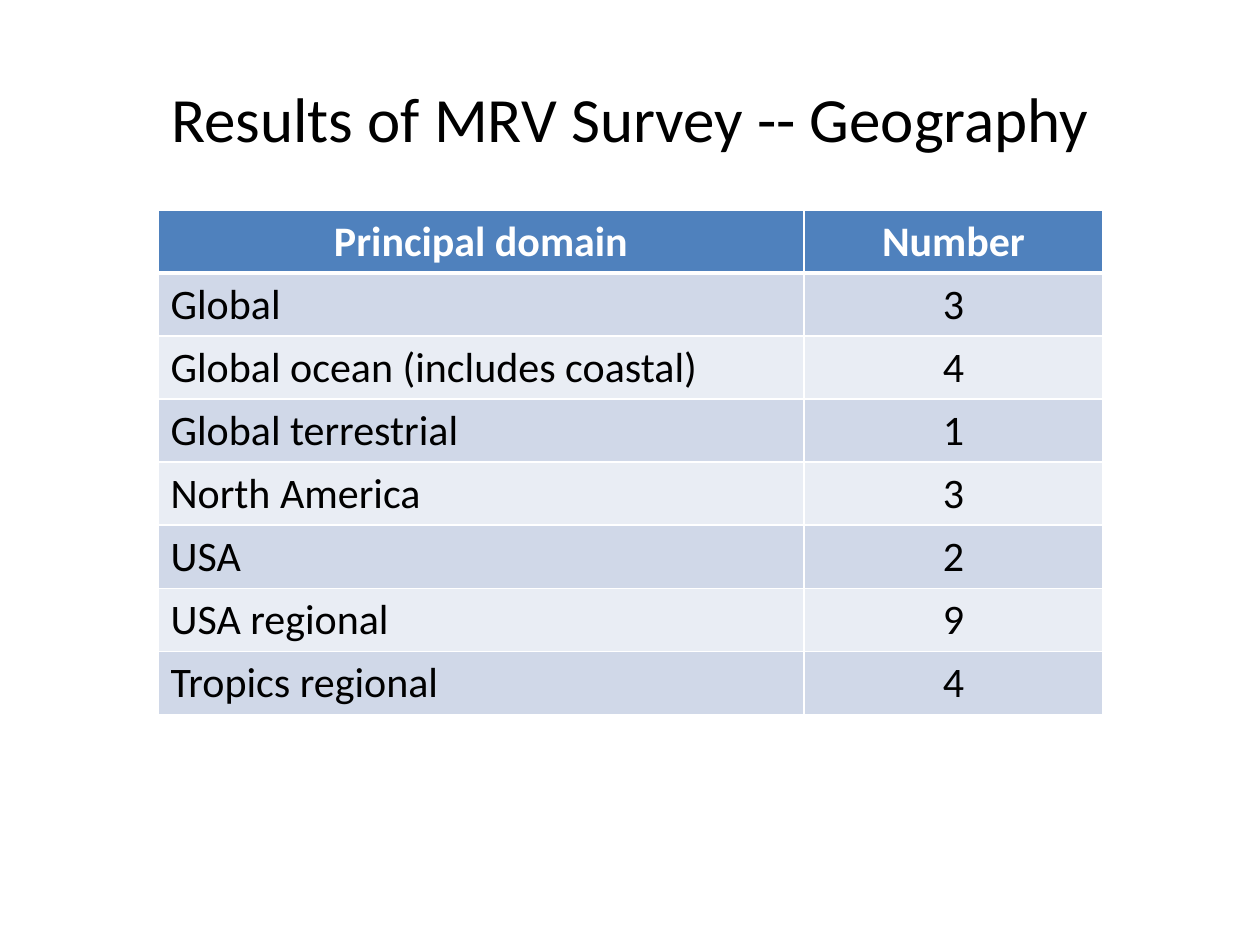
from lxml.etree import SubElement
from pptx import Presentation
from pptx.dml.color import RGBColor
from pptx.enum.text import MSO_ANCHOR, PP_ALIGN
from pptx.oxml.ns import qn
from pptx.util import Emu, Pt

SCALE = 914400 / 126
FONT = "Calibri"
BLACK = RGBColor(0, 0, 0)
WHITE = RGBColor(255, 255, 255)
BLUE = RGBColor(0x4F, 0x81, 0xBD)
BANDS = RGBColor(0xD0, 0xD8, 0xE8), RGBColor(0xE9, 0xED, 0xF4)
TITLE = "Results of MRV Survey -- Geography"
HEAD = "Principal domain", "Number"
DATA = [
    ("Global", 3),
    ("Global ocean (includes coastal)", 4),
    ("Global terrestrial", 1),
    ("North America", 3),
    ("USA", 2),
    ("USA regional", 9),
    ("Tropics regional", 4),
]


def px(*sizes):
    """Turn px lengths into a list of EMU lengths."""
    return [Emu(round(size * SCALE)) for size in sizes]


def write(frame, text, size=24, color=BLACK, bold=False, align=PP_ALIGN.LEFT):
    """Put one formatted paragraph into a text frame."""
    para = frame.paragraphs[0]
    para.alignment = align
    run = para.add_run()
    run.text = text
    font = run.font
    font.name, font.size, font.bold = FONT, Pt(size), bold
    font.color.rgb = color


def edge(cell, top=1, base=1):
    """Draw white lines round a cell, with widths in points."""
    props = cell._tc.get_or_add_tcPr()
    for side, width in zip("LRTB", (1, 1, top, base)):
        line = SubElement(props, qn(f"a:ln{side}"), w=str(Pt(width)))
        fill = SubElement(line, qn("a:solidFill"))
        SubElement(fill, qn("a:srgbClr"), val=str(WHITE))


def title(slide, box):
    """Place the centred slide title in its box."""
    frame = slide.shapes.add_textbox(*px(*box)).text_frame
    frame.word_wrap = True
    frame.vertical_anchor = MSO_ANCHOR.MIDDLE
    write(frame, TITLE, size=36, align=PP_ALIGN.CENTER)


def survey(slide, box, first):
    """Place the survey table in its box, given the first column's width."""
    rows = [HEAD, *DATA]
    table = slide.shapes.add_table(len(rows), len(HEAD), *px(*box)).table
    for col, width in zip(table.columns, px(first, box[2] - first)):
        col.width = width
    for i, row in enumerate(rows):
        head = i == 0
        for j, value in enumerate(row):
            cell = table.cell(i, j)
            edge(cell, top=3 if i == 1 else 1, base=3 if head else 1)
            cell.fill.solid()
            cell.fill.fore_color.rgb = BLUE if head else BANDS[(i - 1) % 2]
            write(
                cell.text_frame,
                str(value),
                color=WHITE if head else BLACK,
                bold=head,
                align=PP_ALIGN.CENTER if head or j else PP_ALIGN.LEFT,
            )


def main():
    """Build the slide and save it."""
    deck = Presentation()
    deck.slide_width, deck.slide_height = px(1260, 945)
    slide = deck.slides.add_slide(deck.slide_layouts[6])
    title(slide, (63, 38, 1134, 158))
    survey(slide, (158, 210, 945, 504), 646)
    deck.save("out.pptx")


if __name__ == "__main__":
    main()
